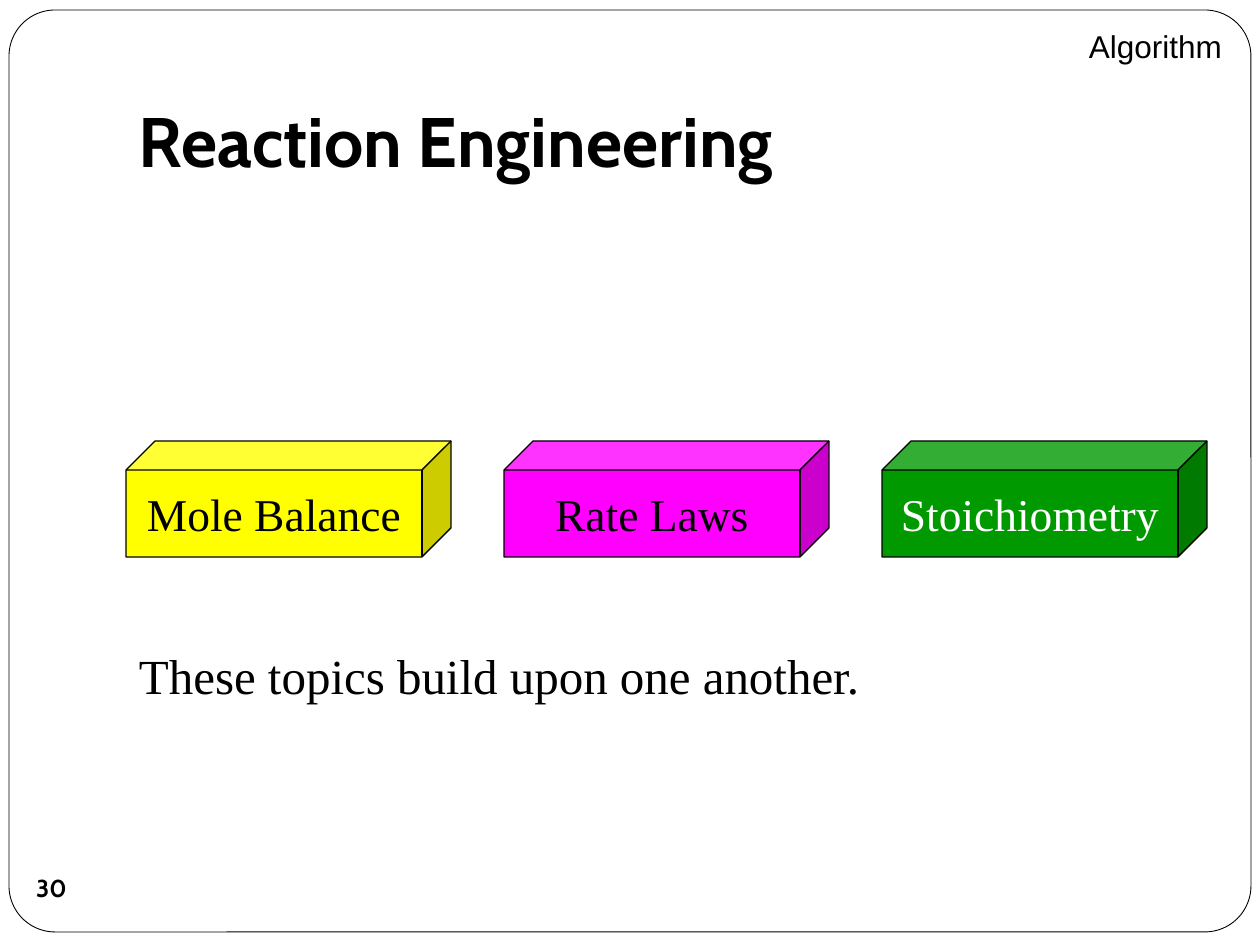
from pptx import Presentation
from pptx.dml.color import RGBColor
from pptx.enum.shapes import MSO_SHAPE
from pptx.enum.text import MSO_ANCHOR, PP_ALIGN
from pptx.util import Emu, Pt

ROUNDED, CUBE, OVAL = MSO_SHAPE.ROUNDED_RECTANGLE, MSO_SHAPE.CUBE, MSO_SHAPE.OVAL
MIDDLE, TOP, BOTTOM = MSO_ANCHOR.MIDDLE, MSO_ANCHOR.TOP, MSO_ANCHOR.BOTTOM
LEFT, CENTER, RIGHT = PP_ALIGN.LEFT, PP_ALIGN.CENTER, PP_ALIGN.RIGHT
PX = 914400 // 126
SERIF = "Times New Roman"


def px(*lengths):
    return [Emu(length * PX) for length in lengths]


def write(box, text, font=SERIF, size=26, color="000000", bold=False,
          align=LEFT, anchor=TOP, wrap=True, insets=(13, 6, 13, 6)):
    frame = box.text_frame
    frame.word_wrap = wrap
    frame.vertical_anchor = anchor
    (frame.margin_left, frame.margin_top,
     frame.margin_right, frame.margin_bottom) = px(*insets)
    para = frame.paragraphs[0]
    para.alignment = align
    span = para.add_run()
    span.text = text
    span.font.name = font
    span.font.size = Pt(size)
    span.font.bold = bold
    span.font.color.rgb = RGBColor.from_string(color)


deck = Presentation()
deck.slide_width, deck.slide_height = px(1260, 945)
page = deck.slides.add_slide(deck.slide_layouts[5])

# Rounded page frame, placed behind the title
border = page.shapes.add_shape(ROUNDED, *px(9, 10, 1242, 922))
border.adjustments[0] = 0.05
border.shadow.inherit = False
border.fill.solid()
border.fill.fore_color.rgb = RGBColor.from_string("FFFFFF")
border.line.color.rgb = RGBColor.from_string("000000")
border.line.width = Pt(0.5)
title = page.shapes.title
title.element.addprevious(border.element)

# Title
title.left, title.top, title.width, title.height = px(126, 38, 1071, 157)
write(title, "Reaction Engineering", font="Cabin", size=40, bold=True,
      anchor=BOTTOM, insets=(13, 6, 13, 13))

# Row of building blocks
blocks = [
    ("Mole Balance", "FFFF00", "000000"),
    ("Rate Laws", "FF00FF", "000000"),
    ("Stoichiometry", "009900", "FFFFFF"),
]
for index, (label, fill, color) in enumerate(blocks):
    block = page.shapes.add_shape(CUBE, *px(126 + 378 * index, 441, 325, 116))
    block.adjustments[0] = 0.25
    block.shadow.inherit = False
    block.fill.solid()
    block.fill.fore_color.rgb = RGBColor.from_string(fill)
    block.line.color.rgb = RGBColor.from_string("000000")
    block.line.width = Pt(0.75)
    write(block, label, color=color, align=CENTER, anchor=MIDDLE, wrap=False)

# Closing remark
remark = page.shapes.add_textbox(*px(126, 640, 917, 72))
write(remark, "These topics build upon one another.", size=28)

# Page number
number = page.shapes.add_shape(OVAL, *px(20, 856, 63, 63))
number.shadow.inherit = False
number.fill.background()
number.line.fill.background()
write(number, "30", font="Cabin", size=14, bold=True, align=CENTER,
      anchor=MIDDLE, wrap=False, insets=(0, 0, 0, 0))

# Section label
section = page.shapes.add_textbox(*px(887, 21, 348, 50))
write(section, "Algorithm", font="Arial", size=18, align=RIGHT)

deck.save("out.pptx")
